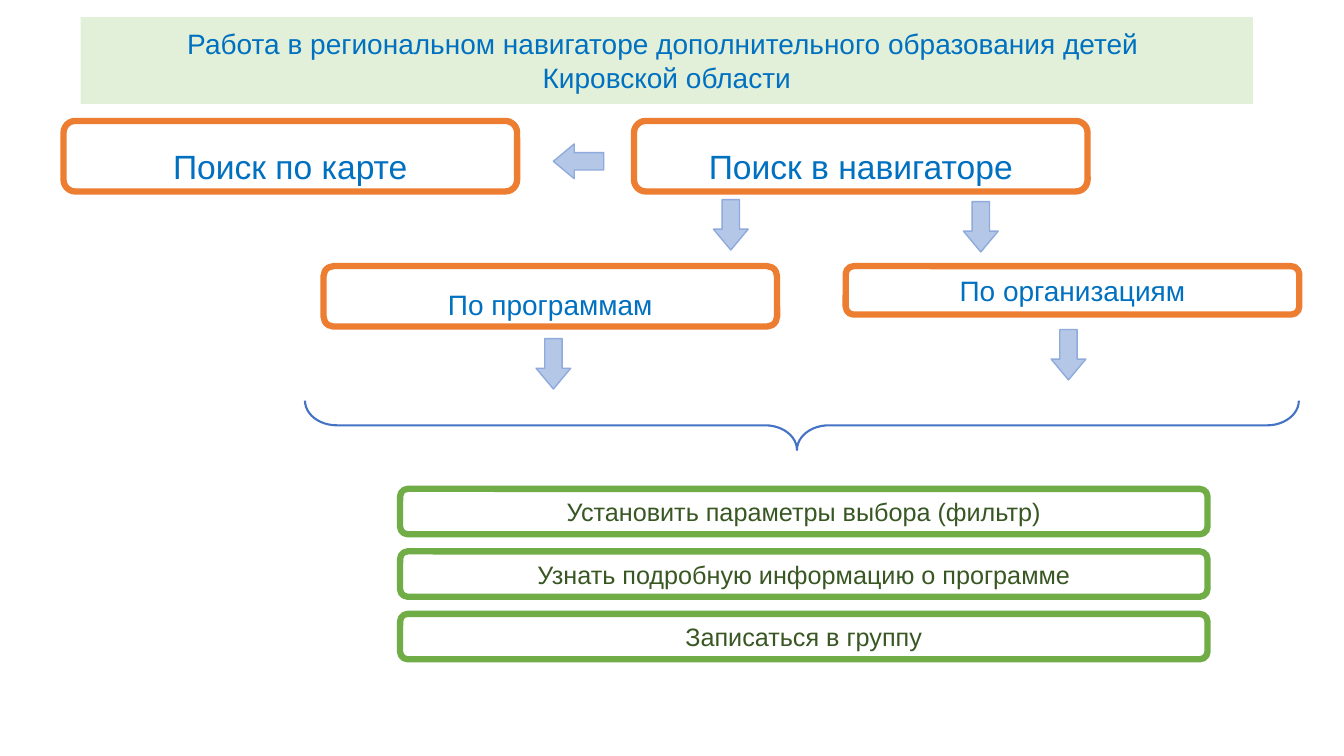
from dataclasses import dataclass

from lxml.etree import SubElement
from pptx import Presentation
from pptx.dml.color import RGBColor
from pptx.enum.shapes import MSO_SHAPE as Shape
from pptx.enum.text import MSO_ANCHOR as Anchor, MSO_AUTO_SIZE as AutoSize, PP_ALIGN as Align
from pptx.oxml.ns import qn
from pptx.util import Pt

TITLE = ["Работа в региональном навигаторе дополнительного образования детей ", "Кировской области"]
TITLE_PLACE = (57.6, 12.24, 837.4, 61.9)

# text, left, top, height, type size, line spacing
SEARCHES = [
    ("Поиск по карте", 45.4, 86.4, 50.4, 24, 1.5),
    ("Поиск в навигаторе", 452.9, 86.4, 50.4, 24, 1.5),
    ("По программам", 231.1, 190.1, 43.2, 20, 1.5),
    ("По организациям", 604.1, 190.1, 34.6, 20, 1),
]
STEPS = ["Установить параметры выбора (фильтр)", "Узнать подробную информацию о программе", "Записаться в группу"]

# centre x, centre y
LEFT_ARROW = (413.3, 115.2)
DOWN_ARROWS = [(522, 160.6), (700.6, 162), (395.3, 259.9), (763.2, 253.4)]
BRACE_CENTRE = (572.8, 303.8)

SEARCH_WIDTH = 324
STEP_LEFT, STEP_TOP, STEP_WIDTH, STEP_HEIGHT, STEP_PITCH = 285.8, 349.2, 576.7, 32.4, 44.64
ARROW_LENGTH, ARROW_BREADTH = 36, 24.8
BRACE_DEPTH, BRACE_SPAN = 35.3, 709.9


@dataclass(frozen=True)
class Theme:
    font: str = "Arial"
    white: str = "FFFFFF"
    title_fill: str = "E2F0D9"
    blue_text: str = "0070C0"
    green_text: str = "385723"
    orange: str = "ED7D31"
    green: str = "70AD47"
    arrow_fill: str = "B4C7E7"
    arrow_line: str = "8FAADC"
    brace: str = "4472C4"
    title_size: int = 20
    step_size: int = 18
    box_line: float = 4.5
    arrow_line_width: float = 1
    brace_line: float = 1.5


theme = Theme()


def paint(shape, fill, line, width):
    shape.shadow.inherit = False
    if fill:
        shape.fill.solid()
        shape.fill.fore_color.rgb = RGBColor.from_string(fill)
    else:
        shape.fill.background()
    shape.line.color.rgb = RGBColor.from_string(line)
    shape.line.width = Pt(width)


def write(shape, lines, size, color, spacing=1):
    frame = shape.text_frame
    frame.text = "\n".join(lines)
    frame.word_wrap = True
    frame.auto_size = AutoSize.SHAPE_TO_FIT_TEXT
    frame.vertical_anchor = Anchor.MIDDLE
    for para in frame.paragraphs:
        para.alignment = Align.CENTER
        para.line_spacing = float(spacing)
        para.font.name = theme.font
        para.font.size = Pt(size)
        para.font.color.rgb = RGBColor.from_string(color)


def add_box(page, text, place, line, size, color, spacing=1):
    box = page.shapes.add_shape(Shape.ROUNDED_RECTANGLE, *map(Pt, place))
    paint(box, theme.white, line, theme.box_line)
    write(box, [text], size, color, spacing)


def add_centred(page, kind, centre, width, height):
    x, y = centre
    return page.shapes.add_shape(kind, Pt(x - width / 2), Pt(y - height / 2), Pt(width), Pt(height))


def add_arrow(page, kind, centre, width, height):
    arrow = add_centred(page, kind, centre, width, height)
    arrow.adjustments[1] = 0.6
    paint(arrow, theme.arrow_fill, theme.arrow_line, theme.arrow_line_width)


def add_title(page):
    title = page.shapes.title
    title.left, title.top, title.width, title.height = map(Pt, TITLE_PLACE)
    geometry = SubElement(title.element.spPr, qn("a:prstGeom"), prst="roundRect")
    SubElement(geometry, qn("a:avLst"))
    title.fill.solid()
    title.fill.fore_color.rgb = RGBColor.from_string(theme.title_fill)
    write(title, TITLE, theme.title_size, theme.blue_text)


def add_brace(page):
    brace = add_centred(page, Shape.RIGHT_BRACE, BRACE_CENTRE, BRACE_DEPTH, BRACE_SPAN)
    brace.rotation = 90
    brace.adjustments[0] = 0.644
    brace.adjustments[1] = 0.505
    paint(brace, None, theme.brace, theme.brace_line)


def main():
    deck = Presentation()
    deck.slide_width, deck.slide_height = Pt(960), Pt(540)
    page = deck.slides.add_slide(deck.slide_layouts[5])
    add_title(page)
    for text, left, top, height, size, spacing in SEARCHES:
        add_box(page, text, (left, top, SEARCH_WIDTH, height), theme.orange, size, theme.blue_text, spacing)
    for row, text in enumerate(STEPS):
        place = (STEP_LEFT, STEP_TOP + row * STEP_PITCH, STEP_WIDTH, STEP_HEIGHT)
        add_box(page, text, place, theme.green, theme.step_size, theme.green_text)
    add_arrow(page, Shape.LEFT_ARROW, LEFT_ARROW, ARROW_LENGTH, ARROW_BREADTH)
    for centre in DOWN_ARROWS:
        add_arrow(page, Shape.DOWN_ARROW, centre, ARROW_BREADTH, ARROW_LENGTH)
    add_brace(page)
    deck.save("out.pptx")


if __name__ == "__main__":
    main()
